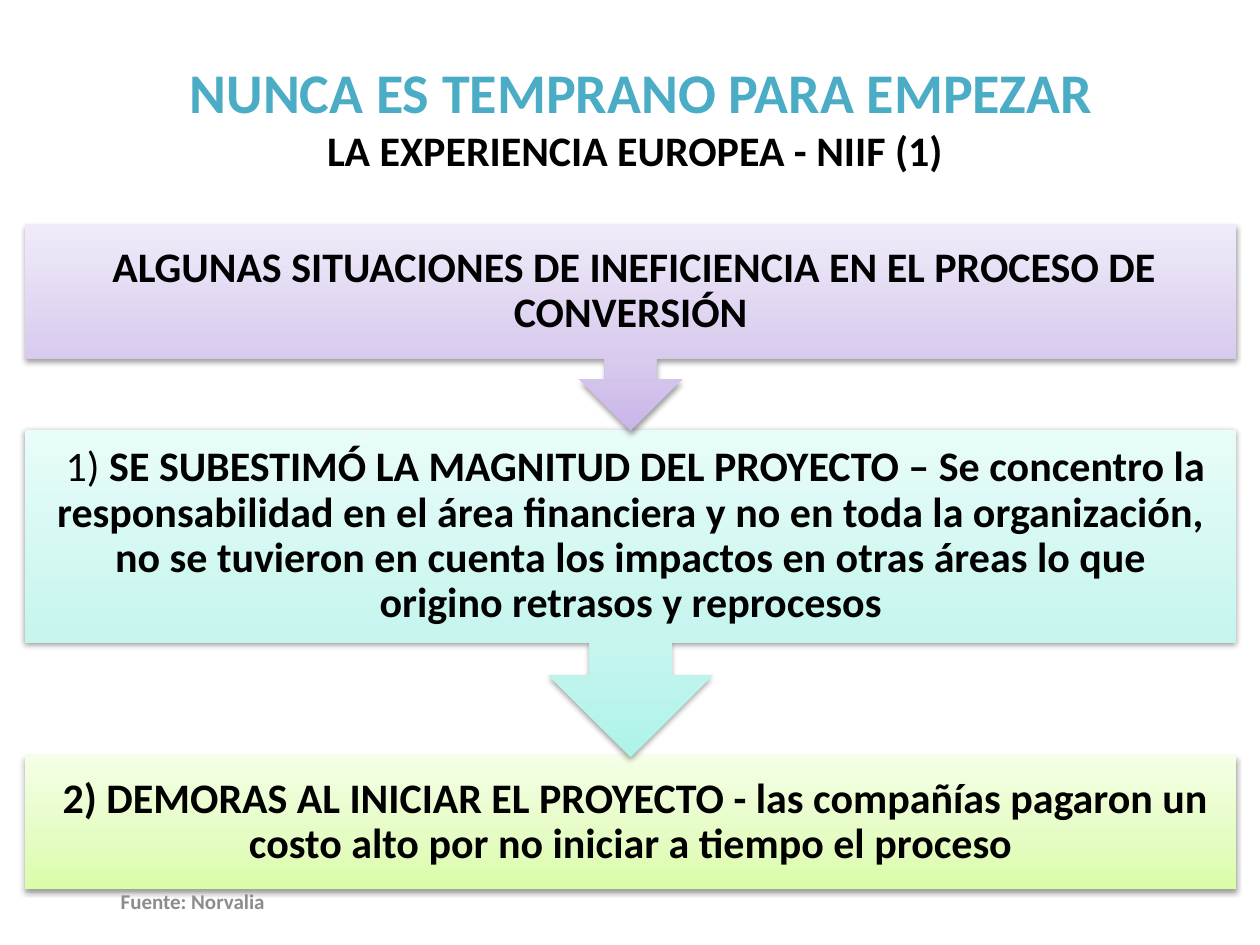
from copy import deepcopy
from dataclasses import dataclass

from lxml.etree import SubElement
from pptx import Presentation
from pptx.dml.color import RGBColor
from pptx.enum.shapes import MSO_SHAPE as Preset
from pptx.enum.text import MSO_ANCHOR as Anchor, MSO_AUTO_SIZE as AutoSize, PP_ALIGN as Align
from pptx.oxml.ns import qn
from pptx.shapes.autoshape import Shape
from pptx.slide import Slide
from pptx.text.text import TextFrame
from pptx.util import Inches, Pt

FONT = "Calibri"
BLACK = RGBColor(0x00, 0x00, 0x00)
AQUA = RGBColor(0x4B, 0xAC, 0xC6)
GRAY = RGBColor(0x8C, 0x8C, 0x8C)
PURPLES = (RGBColor(0xC9, 0xB5, 0xE8), RGBColor(0xD8, 0xCB, 0xEE), RGBColor(0xF0, 0xEA, 0xF9))
TEALS = (RGBColor(0xAE, 0xF3, 0xE9), RGBColor(0xC6, 0xF5, 0xEE), RGBColor(0xE8, 0xFC, 0xF9))
LIMES = (RGBColor(0xDA, 0xFD, 0xA7), RGBColor(0xE4, 0xFC, 0xC2), RGBColor(0xF5, 0xFF, 0xE7))
STOP_POSITIONS = (0, 0.35, 1)
STEP_LEFT, STEP_WIDTH = 0.2, 9.61


@dataclass(frozen=True)
class Piece:
    text: str
    size: int = 24
    color: RGBColor = BLACK
    bold: bool = True


@dataclass(frozen=True)
class Step:
    preset: Preset
    top: float
    height: float
    inset: float
    colors: tuple[RGBColor, ...]
    pieces: tuple[Piece, ...]


STEPS = (
    Step(Preset.RECTANGLE, 5.99, 1.07, 0.19, LIMES, (
        Piece(" 2) DEMORAS AL INICIAR EL PROYECTO - las compañías pagaron un "
              "costo alto por no iniciar a tiempo el proceso"),
    )),
    Step(Preset.DOWN_ARROW_CALLOUT, 3.41, 2.6, 0.19, TEALS, (
        Piece(" 1) ", bold=False),
        Piece("SE SUBESTIMÓ LA MAGNITUD DEL PROYECTO – Se concentro la "
              "responsabilidad en el área financiera y no en toda la organización, "
              "no se tuvieron en cuenta los impactos en otras áreas lo que "
              "origino retrasos y reprocesos"),
    )),
    Step(Preset.DOWN_ARROW_CALLOUT, 1.78, 1.64, 0.14, PURPLES, (
        Piece(" ", size=18),
        Piece("ALGUNAS SITUACIONES DE INEFICIENCIA EN EL PROCESO DE CONVERSIÓN"),
    )),
)
HEADING = (
    Piece(" NUNCA ES TEMPRANO PARA EMPEZAR", size=32, color=AQUA),
    Piece("LA EXPERIENCIA EUROPEA - NIIF (1)"),
)


def write(frame: TextFrame, pieces: tuple[Piece, ...], separator: str = "") -> None:
    frame.word_wrap = True
    frame.auto_size = AutoSize.NONE
    frame.vertical_anchor = Anchor.MIDDLE
    paragraph = frame.paragraphs[0]
    paragraph.alignment = Align.CENTER
    if separator:
        paragraph.text = separator.join(piece.text for piece in pieces)
    else:
        for piece in pieces:
            paragraph.add_run().text = piece.text
    for run, piece in zip(paragraph.runs, pieces):
        run.font.name = FONT
        run.font.size = Pt(piece.size)
        run.font.bold = piece.bold
        run.font.color.rgb = piece.color


def fill_gradient(shape: Shape, colors: tuple[RGBColor, ...]) -> None:
    shape.fill.gradient()
    shape.fill.gradient_angle = 90
    stop_list = shape.element.spPr.find(qn("a:gradFill")).find(qn("a:gsLst"))
    stop_list.append(deepcopy(stop_list[-1]))
    for stop, position, color in zip(shape.fill.gradient_stops, STOP_POSITIONS, colors):
        stop.position = position
        stop.color.rgb = color


def add_shadow(shape: Shape) -> None:
    shape.shadow.inherit = False
    effects = shape.element.spPr.find(qn("a:effectLst"))
    shadow = SubElement(effects, qn("a:outerShdw"), blurRad=str(Pt(3.1)),
                        dist=str(Pt(1.6)), dir="5400000", rotWithShape="0")
    color = SubElement(shadow, qn("a:srgbClr"), val=str(BLACK))
    SubElement(color, qn("a:alpha"), val="38000")


def draw_step(slide: Slide, step: Step) -> None:
    shape = slide.shapes.add_shape(
        step.preset, Inches(STEP_LEFT), Inches(step.top), Inches(STEP_WIDTH), Inches(step.height))
    fill_gradient(shape, step.colors)
    shape.line.fill.background()
    add_shadow(shape)
    frame = shape.text_frame
    frame.margin_left = frame.margin_right = Inches(step.inset)
    frame.margin_top = frame.margin_bottom = Inches(step.inset)
    write(frame, step.pieces)
    frame.paragraphs[0].line_spacing = 0.9


def main() -> None:
    deck = Presentation()
    deck.slide_width, deck.slide_height = Inches(10), Inches(7.5)
    slide = deck.slides.add_slide(deck.slide_layouts[5])

    for step in STEPS:
        draw_step(slide, step)

    heading = slide.shapes.title
    heading.left, heading.top = Inches(0.51), Inches(0.29)
    heading.width, heading.height = Inches(9.06), Inches(1.26)
    write(heading.text_frame, HEADING, separator="\v")

    credit = slide.shapes.add_textbox(Inches(0.43), Inches(6.95), Inches(2.2), Inches(0.4))
    write(credit.text_frame, (Piece("Fuente: Norvalia", size=12, color=GRAY),))

    deck.save("out.pptx")


if __name__ == "__main__":
    main()
